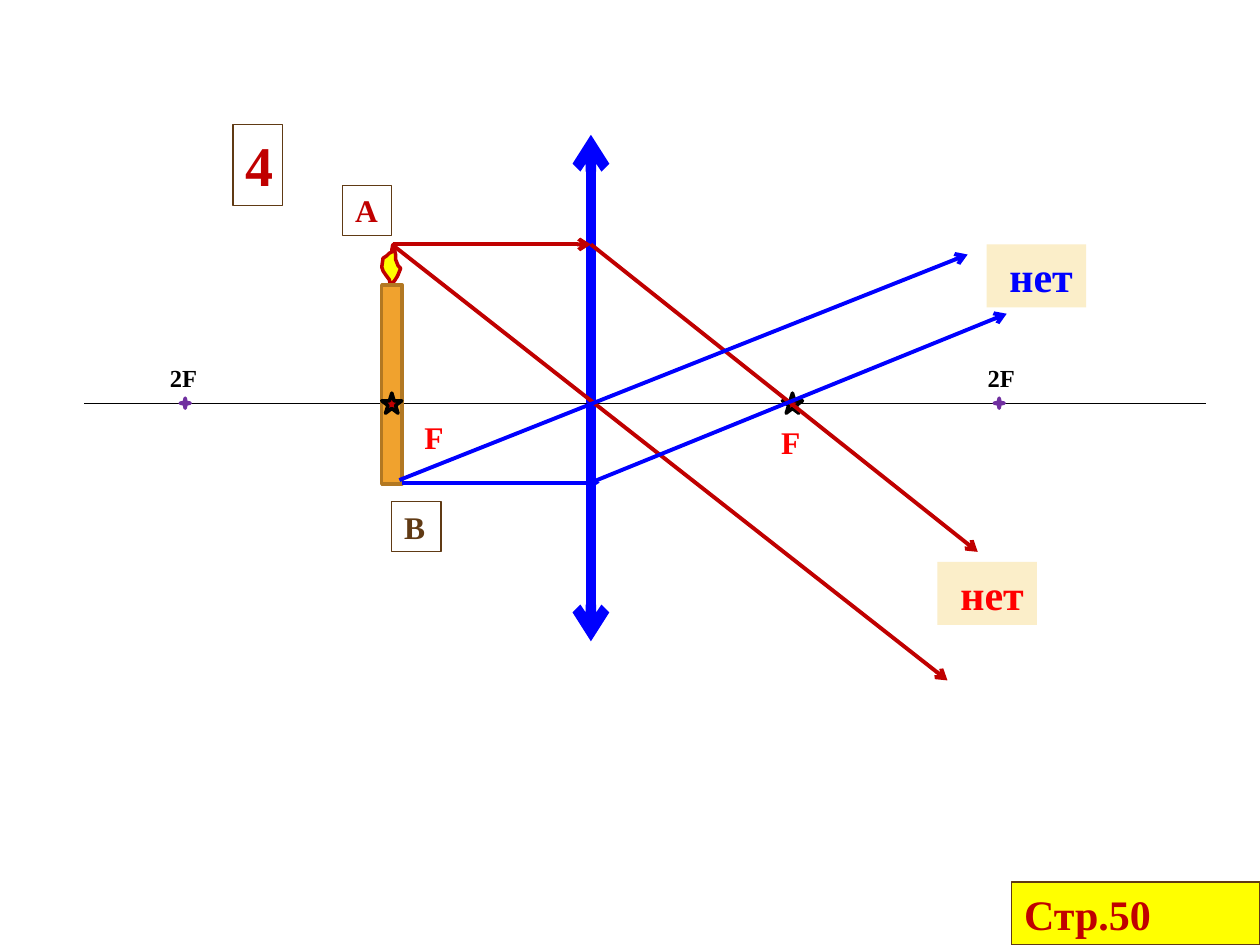
from dataclasses import dataclass

from lxml import etree
from pptx import Presentation
from pptx.dml.color import RGBColor
from pptx.enum.shapes import MSO_CONNECTOR, MSO_SHAPE
from pptx.enum.text import MSO_AUTO_SIZE
from pptx.oxml.ns import qn
from pptx.util import Inches, Pt

STRAIGHT = MSO_CONNECTOR.STRAIGHT
RECTANGLE = MSO_SHAPE.RECTANGLE
STAR_4 = MSO_SHAPE.STAR_4_POINT
STAR_5 = MSO_SHAPE.STAR_5_POINT
FIT_SHAPE = MSO_AUTO_SIZE.SHAPE_TO_FIT_TEXT


@dataclass(frozen=True)
class Theme:
    """Colours, font and sizes used on the slide."""
    font: str = "Times New Roman"
    black: str = "000000"
    blue: str = "0000FF"
    dark_red: str = "C00000"
    red: str = "FF0000"
    purple: str = "7030A0"
    brown: str = "603A14"
    yellow: str = "FFFF00"
    cream: str = "FBEEC9"
    wax: str = "F0A22E"
    wax_edge: str = "B27822"
    small: int = 14
    label: int = 18
    answer: int = 24
    number: int = 32
    hairline: float = 0.75
    outline: float = 2
    ray: float = 2.25
    lens: float = 6


@dataclass(frozen=True)
class Box:
    """A region of the slide, in inches."""
    left: float
    top: float
    width: float
    height: float

    def inner(self, left, top, width, height):
        """Return a box placed relative to this one."""
        return Box(self.left + left, self.top + top, width, height)

    def lengths(self):
        """Return the box as slide lengths."""
        return [Inches(value) for value in (self.left, self.top, self.width, self.height)]


THEME = Theme()
FLAME = [(0.07, 0.33), (0.06, 0.28), (0.03, 0.24), (0.01, 0.21), (0, 0.18),
         (0.01, 0.11), (0.04, 0.09), (0.06, 0.07), (0.08, 0.06), (0.08, 0.04),
         (0.09, 0), (0.1, 0.04), (0.11, 0.08), (0.11, 0.12), (0.13, 0.17),
         (0.15, 0.19), (0.13, 0.24), (0.12, 0.26), (0.1, 0.29), (0.08, 0.31)]


def paint(shape, fill=None, line=None, weight=THEME.outline):
    """Set the fill and outline of a shape."""
    if fill:
        shape.fill.solid()
        shape.fill.fore_color.rgb = RGBColor.from_string(fill)
    else:
        shape.fill.background()
    if line:
        shape.line.color.rgb = RGBColor.from_string(line)
        shape.line.width = Pt(weight)
    else:
        shape.line.fill.background()


def add_figure(slide, kind, box, fill, line):
    """Add a preset shape without shadow."""
    shape = slide.shapes.add_shape(kind, *box.lengths())
    shape.shadow.inherit = False
    paint(shape, fill, line)


def add_line(slide, start, end, color, weight, arrows=()):
    """Add a straight line with arrowheads at the named ends."""
    points = [Inches(value) for value in (*start, *end)]
    connector = slide.shapes.add_connector(STRAIGHT, *points)
    connector.line.color.rgb = RGBColor.from_string(color)
    connector.line.width = Pt(weight)
    for name in arrows:
        etree.SubElement(connector.line._get_or_add_ln(), qn(f"a:{name}"), type="arrow")
    etree.SubElement(connector._element.spPr, qn("a:effectLst"))


def add_label(slide, box, text, size, color, fill=None, line=None, wrap=True):
    """Add a bold text box, optionally filled and framed."""
    shape = slide.shapes.add_textbox(*box.lengths())
    paint(shape, fill, line, THEME.hairline)
    frame = shape.text_frame
    frame.word_wrap = wrap
    frame.auto_size = FIT_SHAPE
    paragraph = frame.paragraphs[0]
    paragraph.text = text
    paragraph.font.name = THEME.font
    paragraph.font.size = Pt(size)
    paragraph.font.bold = True
    paragraph.font.color.rgb = RGBColor.from_string(color)


def draw_lens_and_axis(slide, box):
    """Draw the lens as a double arrow and the optical axis across the box."""
    lens_x, axis_y = box.left + 4.02, box.top + 2.13
    add_line(slide, (lens_x, box.top), (lens_x, box.top + 4.02),
             THEME.blue, THEME.lens, ("headEnd", "tailEnd"))
    add_line(slide, (box.left, axis_y), (box.left + box.width, axis_y), THEME.black, THEME.hairline)


def draw_candle(slide, box):
    """Draw a candle that fills the box, with its flame on top."""
    flame_height = 0.32
    points = [(Inches(box.left + x), Inches(box.top + y)) for x, y in FLAME]
    builder = slide.shapes.build_freeform(*points[0], scale=1.0)
    builder.add_line_segments(points[1:], close=True)
    flame = builder.convert_to_shape()
    flame.shadow.inherit = False
    paint(flame, THEME.yellow, THEME.dark_red)
    body = box.inner(0, flame_height, box.width, box.height - flame_height)
    add_figure(slide, RECTANGLE, body, THEME.wax, THEME.wax_edge)


def draw_focal_points(slide, box):
    """Mark F and 2F on both sides of the lens and name them."""
    center, axis_y = 4.03, 2.13
    marks = ((STAR_5, 1.59, 0.16, THEME.black), (STAR_4, 3.23, 0.08, THEME.purple))
    for kind, distance, size, line in marks:
        for side in (-1, 1):
            mark = box.inner(center + side * distance - size / 2, axis_y - size / 2, size, size)
            add_figure(slide, kind, mark, THEME.dark_red, line)
    for left, top in ((2.6, 2.2), (5.43, 2.24)):
        add_label(slide, box.inner(left, top, 0.39, 0.4), "F", THEME.label, THEME.red)
    for left in (0.58, 7.07):
        add_label(slide, box.inner(left, 1.76, 0.47, 0.34), "2F", THEME.small, THEME.black)


def draw_rays(slide, box):
    """Draw the red rays from A and the blue rays from B."""
    rays = {
        THEME.dark_red: (((2.45, 0.87), (4.02, 0.87)), ((4.02, 0.87), (7.09, 3.31)),
                         ((2.44, 0.87), (6.85, 4.33))),
        THEME.blue: (((2.52, 2.76), (4.09, 2.76)), ((4.02, 2.76), (7.32, 1.42)),
                     ((2.5, 2.74), (7.01, 0.95))),
    }
    for color, segments in rays.items():
        for segment in segments:
            start, end = [(box.left + x, box.top + y) for x, y in segment]
            add_line(slide, start, end, color, THEME.ray, ("tailEnd",))


def draw_labels(slide, box):
    """Name the candle ends, number the task and place the answers."""
    framed = ((2.05, 0.4, 0.4, "А", THEME.label, THEME.dark_red),
              (2.44, 2.91, 0.4, "В", THEME.label, THEME.brown),
              (1.18, -0.08, 0.64, "4", THEME.number, THEME.dark_red))
    for left, top, height, text, size, color in framed:
        add_label(slide, box.inner(left, top, 0.39, height), text, size, color, line=THEME.brown)
    for left, top, color in ((6.77, 3.39, THEME.red), (7.16, 0.87, THEME.blue)):
        add_label(slide, box.inner(left, top, 0.79, 0.5), " нет", THEME.answer, color,
                  fill=THEME.cream, wrap=False)


def draw_page_reference(slide, box):
    """Fill the box with the page reference."""
    add_label(slide, box, "Стр.50", THEME.answer, THEME.dark_red, THEME.yellow, THEME.brown)


def main():
    """Build and save the slide."""
    presentation = Presentation()
    presentation.slide_width, presentation.slide_height = Inches(10), Inches(7.5)
    slide = presentation.slides.add_slide(presentation.slide_layouts[6])
    diagram = Box(0.67, 1.07, 8.9, 4.33)
    draw_lens_and_axis(slide, diagram)
    draw_candle(slide, diagram.inner(2.36, 0.87, 0.16, 1.9))
    draw_focal_points(slide, diagram)
    draw_rays(slide, diagram)
    draw_labels(slide, diagram)
    draw_page_reference(slide, Box(8.03, 7, 1.97, 0.5))
    presentation.save("out.pptx")


if __name__ == "__main__":
    main()
